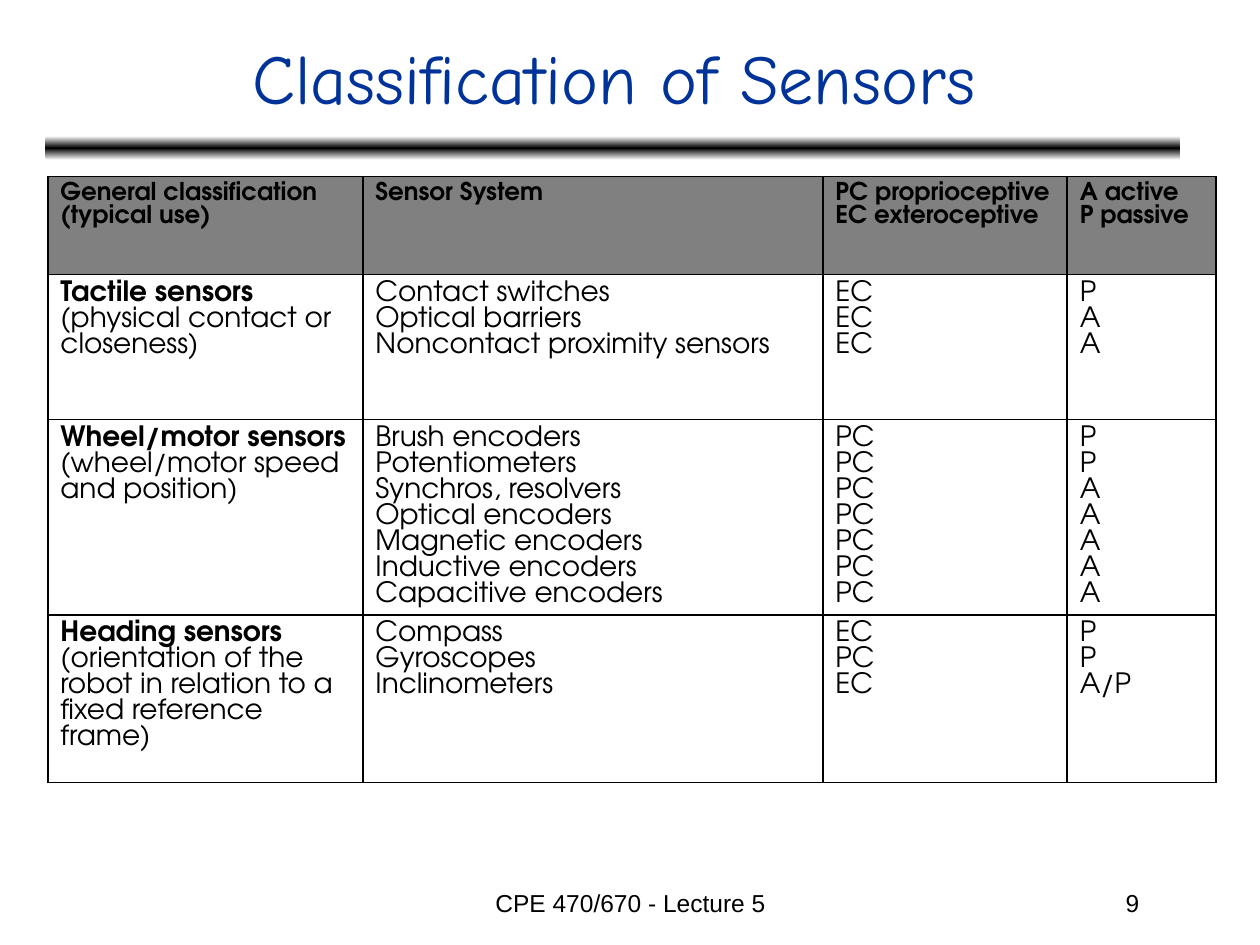
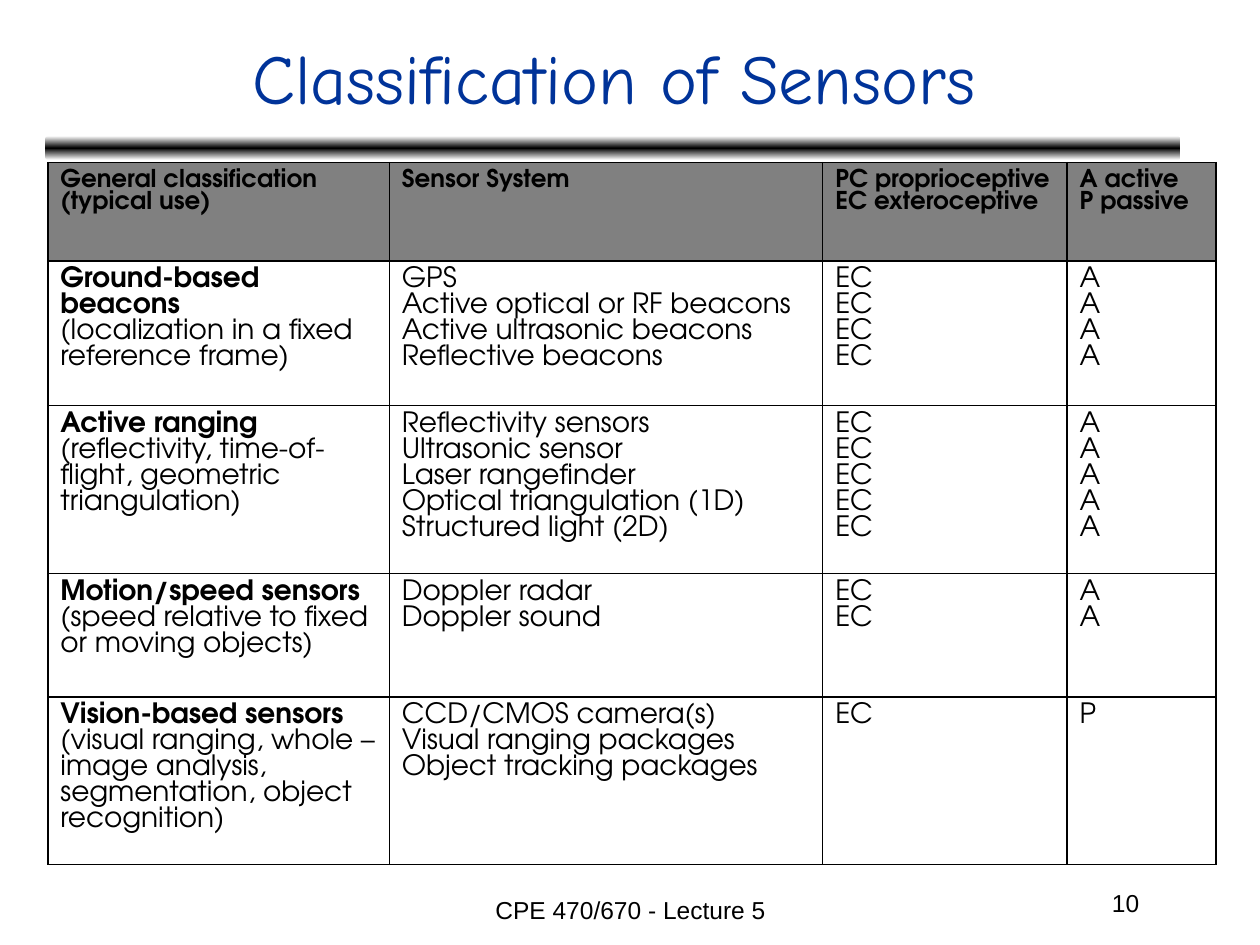
from copy import deepcopy
from dataclasses import dataclass

from lxml import etree
from pptx import Presentation
from pptx.dml.color import RGBColor
from pptx.enum.shapes import MSO_SHAPE
from pptx.enum.text import MSO_ANCHOR, PP_ALIGN
from pptx.oxml.ns import qn
from pptx.util import Inches, Pt

ROUNDED = MSO_SHAPE.ROUNDED_RECTANGLE
MIDDLE = MSO_ANCHOR.MIDDLE
CENTER, LEFT, RIGHT = PP_ALIGN.CENTER, PP_ALIGN.LEFT, PP_ALIGN.RIGHT
TITLE_ONLY = 5


@dataclass(frozen=True)
class Theme:
    black: RGBColor = RGBColor(0, 0, 0)
    white: RGBColor = RGBColor(255, 255, 255)
    title: RGBColor = RGBColor(0, 0x33, 0x99)
    header: RGBColor = RGBColor(0x80, 0x80, 0x80)
    title_font: str = "Comic Neue"
    table_font: str = "TeX Gyre Adventor"
    footer_font: str = "Arial"
    title_size: float = 40
    header_size: float = 14
    body_size: float = 16
    footer_size: float = 14
    line_pitch: float = 0.93  # line height per point of type size
    border: float = 1


THEME = Theme()
TITLE = "Classification of Sensors"
LECTURE = "CPE 470/670 - Lecture 5"
TITLE_BOX = (0.37, 0.11, 9, 0.99)
BAND_BOX = (0.36, 1.08, 9.01, 0.19)
TABLE_LEFT = 0.38
CODE_COLUMNS = [1.94, 1.18]

HEADER = [
    ["General classification", "(typical use)"],
    ["Sensor System"],
    ["PC proprioceptive", "EC exteroceptive"],
    ["A active", "P passive"],
]

CONTACT_AND_MOTION = [
    [["Tactile sensors", "(physical contact or closeness)"],
     ["Contact switches", "Optical barriers", "Noncontact proximity sensors"],
     ["EC"] * 3, ["P", "A", "A"]],
    [["Wheel/motor sensors", "(wheel/motor speed and position)"],
     ["Brush encoders", "Potentiometers", "Synchros, resolvers",
      "Optical encoders", "Magnetic encoders", "Inductive encoders",
      "Capacitive encoders"],
     ["PC"] * 7, ["P"] * 2 + ["A"] * 5],
    [["Heading sensors",
      "(orientation of the robot in relation to a fixed reference frame)"],
     ["Compass", "Gyroscopes", "Inclinometers"],
     ["EC", "PC", "EC"], ["P", "P", "A/P"]],
]

BEACONS_TO_VISION = [
    [["Ground-based beacons", "(localization in a fixed reference frame)"],
     ["GPS", "Active optical or RF beacons", "Active ultrasonic beacons",
      "Reflective beacons"],
     ["EC"] * 4, ["A"] * 4],
    [["Active ranging",
      "(reflectivity, time-of-flight, geometric triangulation)"],
     ["Reflectivity sensors", "Ultrasonic sensor", "Laser rangefinder",
      "Optical triangulation (1D)", "Structured light (2D)"],
     ["EC"] * 5, ["A"] * 5],
    [["Motion/speed sensors", "(speed relative to fixed or moving objects)"],
     ["Doppler radar", "Doppler sound"],
     ["EC"] * 2, ["A"] * 2],
    [["Vision-based sensors",
      "(visual ranging, whole –image analysis, segmentation, "
      "object recognition)"],
     ["CCD/CMOS camera(s)", "Visual ranging packages",
      "Object tracking packages"],
     ["EC"], ["P"]],
]


def inches(box):
    return [Inches(length) for length in box]


def style(paragraph, font, size, color, align=LEFT, bold=False):
    paragraph.alignment = align
    paragraph.font.name = font
    paragraph.font.size = Pt(size)
    paragraph.font.color.rgb = color
    paragraph.font.bold = bold


def add_band(slide, box):
    """Draw the bar under the title, fading from black to white both ways."""
    band = slide.shapes.add_shape(ROUNDED, *inches(box))
    band.shadow.inherit = False
    band.line.fill.background()
    band.fill.gradient()
    band.fill.gradient_angle = 90
    for stop in band.fill.gradient_stops:
        stop.color.rgb = THEME.white
    stops = band.element.spPr.find(".//" + qn("a:gsLst"))
    middle = deepcopy(stops[0])
    middle.set("pos", "50000")
    middle[0].set("val", str(THEME.black))
    stops.insert(1, middle)


def add_title(slide, box):
    title = slide.shapes.title
    title.left, title.top, title.width, title.height = inches(box)
    title.text_frame.text = TITLE
    title.text_frame.vertical_anchor = MIDDLE
    style(title.text_frame.paragraphs[0], THEME.title_font, THEME.title_size,
          THEME.title, CENTER)


def add_footer(slide, box, text, align):
    frame = slide.shapes.add_textbox(*inches(box)).text_frame
    frame.word_wrap = True
    frame.text = text
    style(frame.paragraphs[0], THEME.footer_font, THEME.footer_size,
          THEME.black, align)


def add_borders(cell):
    properties = cell._tc.get_or_add_tcPr()
    for position, side in enumerate(("lnL", "lnR", "lnT", "lnB")):
        line = etree.Element(qn("a:" + side), w=str(Pt(THEME.border)))
        fill = etree.SubElement(line, qn("a:solidFill"))
        etree.SubElement(fill, qn("a:srgbClr"), val=str(THEME.black))
        properties.insert(position, line)


def fill_cell(cell, lines, is_header, is_category):
    """Write one line per paragraph; a category has its name in bold."""
    if is_header:
        cell.fill.solid()
        cell.fill.fore_color.rgb = THEME.header
    else:
        cell.fill.background()
    add_borders(cell)
    size = THEME.header_size if is_header else THEME.body_size
    cell.text_frame.text = "\n".join(lines)
    for index, paragraph in enumerate(cell.text_frame.paragraphs):
        bold = is_header or (is_category and index == 0)
        style(paragraph, THEME.table_font, size, THEME.black, bold=bold)
        paragraph.line_spacing = Pt(size * THEME.line_pitch)


def add_sensor_table(slide, top, columns, heights, sensors):
    rows = [HEADER] + sensors
    table = slide.shapes.add_table(
        len(rows), len(columns),
        *inches((TABLE_LEFT, top, sum(columns), sum(heights)))).table
    table.first_row = table.horz_banding = False
    for column, width in zip(table.columns, columns):
        column.width = Inches(width)
    for r, (row, height) in enumerate(zip(rows, heights)):
        table.rows[r].height = Inches(height)
        for c, lines in enumerate(row):
            fill_cell(table.cell(r, c), lines, r == 0, c == 0)


def add_sensor_slide(prs, number, lecture_top, **table):
    slide = prs.slides.add_slide(prs.slide_layouts[TITLE_ONLY])
    add_band(slide, BAND_BOX)
    add_title(slide, TITLE_BOX)
    add_footer(slide, (3.42, lecture_top, 3.17, 0.35), LECTURE, CENTER)
    add_footer(slide, (7.17, 7, 1.97, 0.35), str(number), RIGHT)
    add_sensor_table(slide, **table)


def main():
    prs = Presentation()
    prs.slide_width, prs.slide_height = Inches(10), Inches(7.5)
    add_sensor_slide(prs, 9, lecture_top=7, top=1.4,
                     columns=[2.5, 3.65] + CODE_COLUMNS,
                     heights=[0.78, 1.15, 1.55, 1.33],
                     sensors=CONTACT_AND_MOTION)
    add_sensor_slide(prs, 10, lecture_top=7.05, top=1.29,
                     columns=[2.71, 3.44] + CODE_COLUMNS,
                     heights=[0.78, 1.15, 1.33, 0.98, 1.33],
                     sensors=BEACONS_TO_VISION)
    prs.save("out.pptx")


if __name__ == "__main__":
    main()
